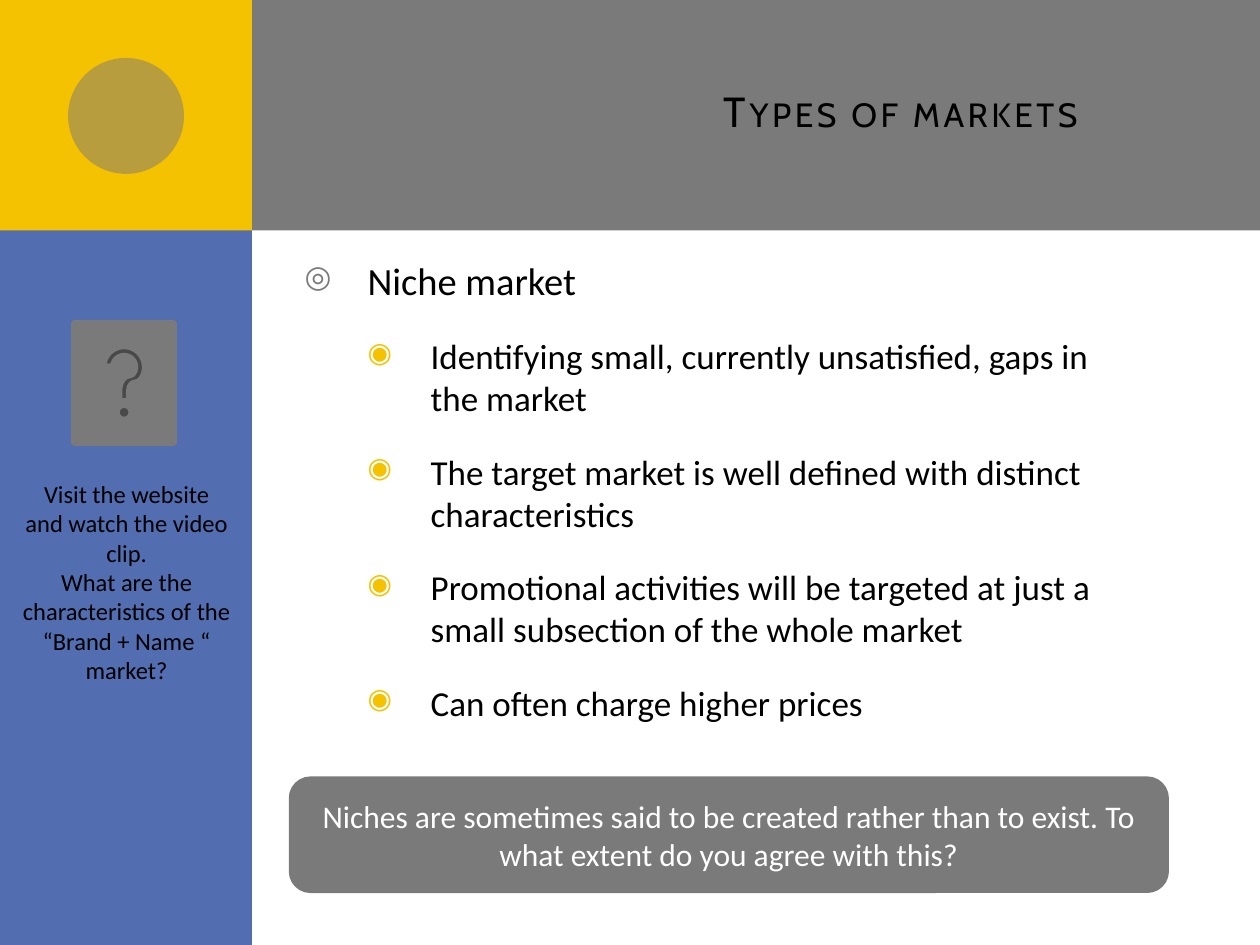
from lxml import etree
from pptx import Presentation
from pptx.dml.color import RGBColor
from pptx.enum.shapes import MSO_SHAPE
from pptx.enum.text import MSO_ANCHOR, MSO_AUTO_SIZE, PP_ALIGN
from pptx.oxml.ns import qn
from pptx.util import Inches, Pt

RECTANGLE = MSO_SHAPE.RECTANGLE
OVAL = MSO_SHAPE.OVAL
ROUNDED = MSO_SHAPE.ROUNDED_RECTANGLE
HELP_BUTTON = MSO_SHAPE.ACTION_BUTTON_HELP
TOP, MIDDLE = MSO_ANCHOR.TOP, MSO_ANCHOR.MIDDLE
LEFT, CENTER, RIGHT = PP_ALIGN.LEFT, PP_ALIGN.CENTER, PP_ALIGN.RIGHT
GROW = MSO_AUTO_SIZE.SHAPE_TO_FIT_TEXT

GRAY = RGBColor(0x7A, 0x7A, 0x7A)
BLUE = RGBColor(0x52, 0x6D, 0xB0)
YELLOW = RGBColor(0xF5, 0xC2, 0x01)
BLACK = RGBColor(0, 0, 0)
WHITE = RGBColor(0xFF, 0xFF, 0xFF)

TITLE_FONT, BODY_FONT = "Cabin", "Calibri"
SIDEBAR_WIDTH, HEADER_HEIGHT = 2, 1.83

HEADING = "Niche market"
POINTS = [
    "Identifying small, currently unsatisfied, gaps in the market",
    "The target market is well defined with distinct characteristics",
    "Promotional activities will be targeted at just a small subsection of the whole market",
    "Can often charge higher prices",
]
QUESTION = ("Niches are sometimes said to be created rather than to exist. "
            "To what extent do you agree with this?")
TASK = [
    "Visit the website and watch the video clip.",
    "What are the characteristics of the “Brand + Name “ market?",
]


def add_block(slide, kind, left, top, width, height, color, outlined=False):
    shape = slide.shapes.add_shape(
        kind, Inches(left), Inches(top), Inches(width), Inches(height))
    shape.shadow.inherit = False
    shape.fill.solid()
    shape.fill.fore_color.rgb = color
    if outlined:
        shape.line.color.rgb = color
        shape.line.width = Pt(4)
    else:
        shape.line.fill.background()
    return shape


def set_opacity(shape, percent):
    color = shape.fill._xPr.find(qn("a:solidFill"))[0]
    etree.SubElement(color, qn("a:alpha"), val=str(percent * 1000))


def write_text(shape, lines, size, color=BLACK, font=BODY_FONT,
               align=LEFT, anchor=TOP):
    frame = shape.text_frame
    frame.word_wrap = True
    frame.vertical_anchor = anchor
    frame.text = "\n".join(lines)
    for paragraph in frame.paragraphs:
        paragraph.alignment = align
        for run in paragraph.runs:
            run.font.size = Pt(size)
            run.font.name = font
            run.font.color.rgb = color


def add_text(slide, left, top, width, height, lines, size, **style):
    box = slide.shapes.add_textbox(
        Inches(left), Inches(top), Inches(width), Inches(height))
    write_text(box, lines, size, **style)
    return box


def set_bullet(paragraph, symbol, color, indent):
    paragraph.space_before = Pt(18)
    properties = paragraph._p.get_or_add_pPr()
    properties.set("marL", str(Inches(indent)))
    properties.set("indent", str(Inches(-0.5)))
    bullet_color = etree.SubElement(properties, qn("a:buClr"))
    etree.SubElement(bullet_color, qn("a:srgbClr"), val=str(color))
    etree.SubElement(properties, qn("a:buSzPct"), val="80000")
    etree.SubElement(properties, qn("a:buChar"), char=symbol)


def add_background(slide):
    add_block(slide, RECTANGLE, 0.5, 0, 9.5, HEADER_HEIGHT, GRAY)
    add_block(slide, RECTANGLE, 0, 0, SIDEBAR_WIDTH, 7.5, BLUE)
    add_block(slide, RECTANGLE, 0, 0, SIDEBAR_WIDTH, HEADER_HEIGHT, YELLOW)
    circle = add_block(slide, OVAL, 0.54, 0.46, 0.92, 0.92, GRAY)
    set_opacity(circle, 50)


def add_title(slide, text):
    title = add_text(slide, 2.67, 0.25, 6.83, 1.25, [text], 24,
                     font=TITLE_FONT, align=RIGHT, anchor=MIDDLE)
    title.text_frame.margin_right = Inches(0.5)
    properties = title.text_frame.paragraphs[0].runs[0].font._element
    properties.set("cap", "small")
    properties.set("spc", "200")


def add_bullets(slide):
    body = add_text(slide, 2.32, 1.99, 6.83, 4.2, [HEADING, *POINTS], 20)
    heading, *points = body.text_frame.paragraphs
    heading.runs[0].font.size = Pt(22)
    set_bullet(heading, "◎", GRAY, 0.5)
    for point in points:
        point.level = 1
        set_bullet(point, "◉", YELLOW, 1)


def main():
    presentation = Presentation()
    presentation.slide_width = Inches(10)
    presentation.slide_height = Inches(7.5)
    slide = presentation.slides.add_slide(presentation.slide_layouts[6])

    add_background(slide)
    add_title(slide, "Types of markets")
    add_bullets(slide)
    question = add_block(slide, ROUNDED, 2.32, 6.19, 6.93, 0.87, GRAY, outlined=True)
    write_text(question, [QUESTION], 18, color=WHITE, align=CENTER, anchor=MIDDLE)
    add_block(slide, HELP_BUTTON, 0.59, 2.57, 0.79, 0.94, GRAY, outlined=True)
    task = add_text(slide, 0.08, 3.75, 1.85, 2.05, TASK, 14, align=CENTER)
    task.text_frame.auto_size = GROW

    presentation.save("out.pptx")


if __name__ == "__main__":
    main()
